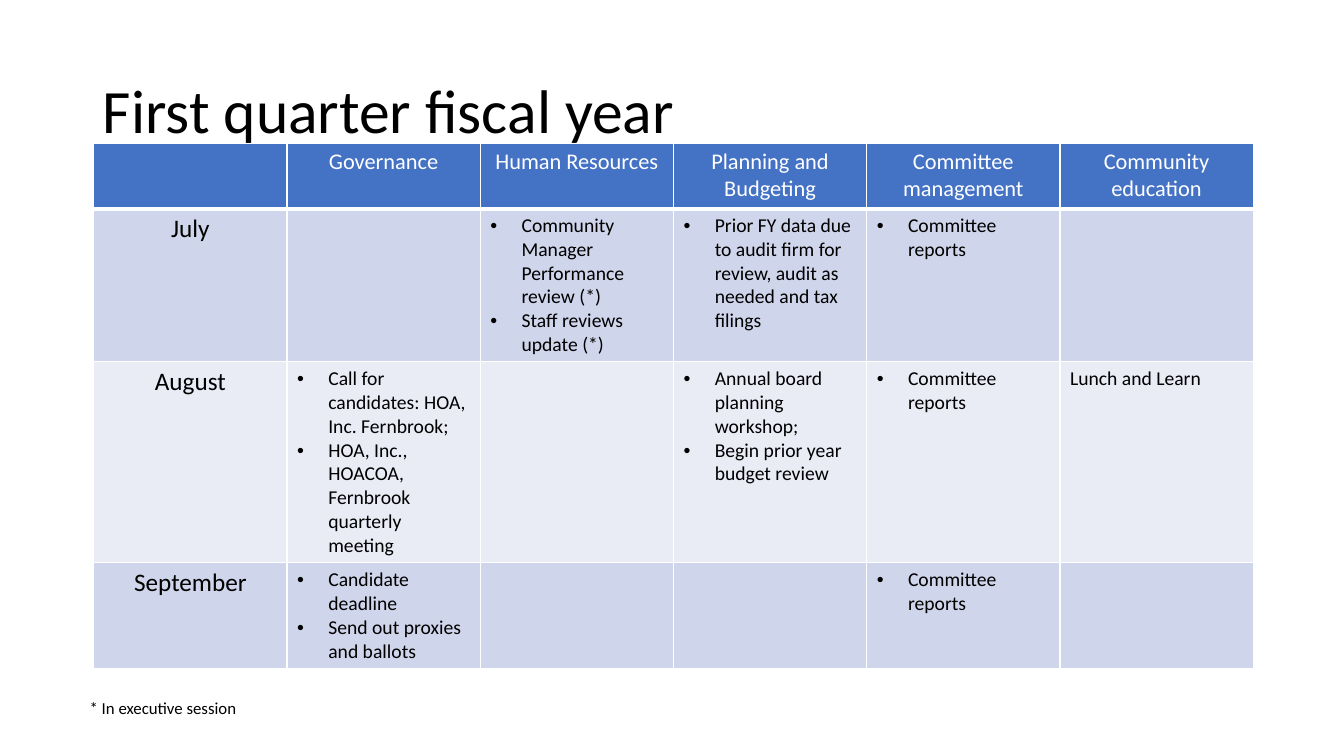
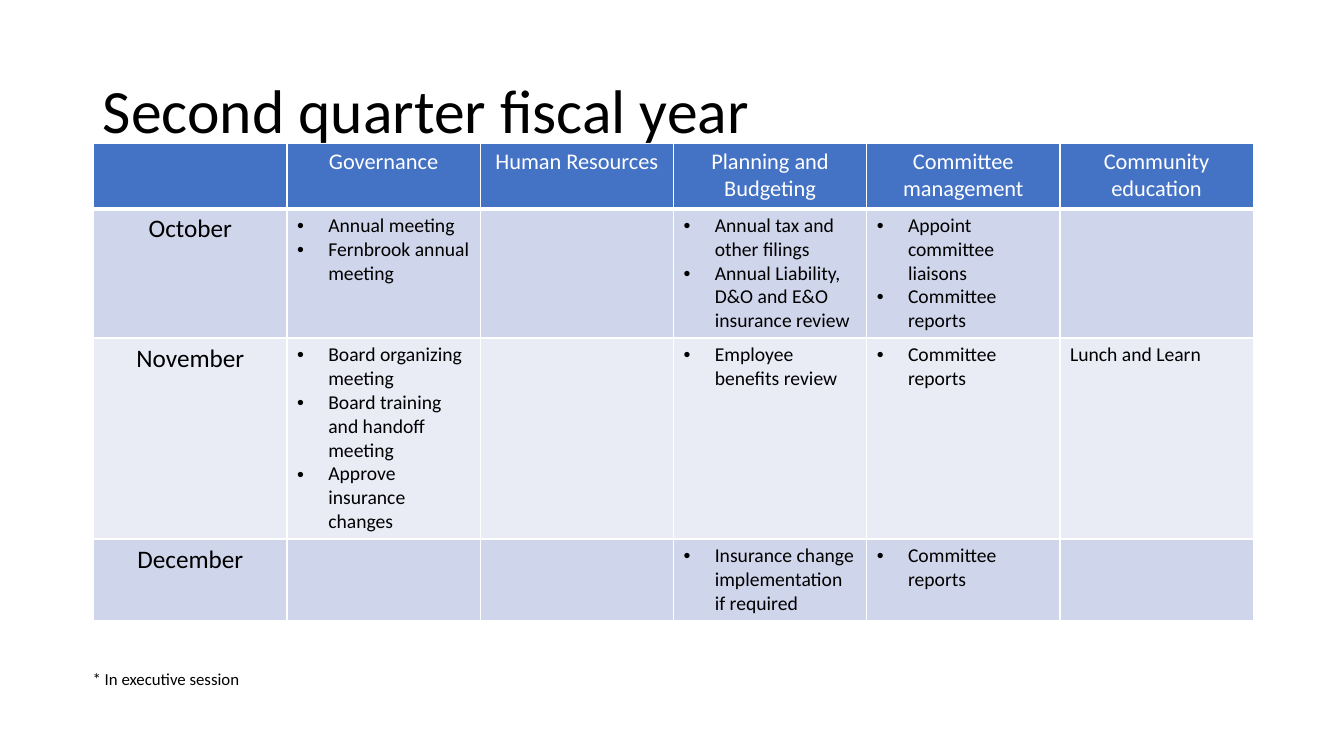
import pptx
import pptx.dml.color
import pptx.enum.text
import pptx.oxml.ns
import pptx.util
from lxml import etree

Inches = pptx.util.Inches
Pt = pptx.util.Pt
ALIGN = pptx.enum.text.PP_ALIGN
ANCHOR = pptx.enum.text.MSO_ANCHOR
AUTO_SIZE = pptx.enum.text.MSO_AUTO_SIZE

AREAS = ["Governance", "Human Resources", "Planning and Budgeting",
         "Committee management", "Community education"]
REPORTS = ["Committee reports"]
LUNCH = "Lunch and Learn"

QUARTERS = [
    {
        "title": "First quarter fiscal year",
        "months": [
            ("July", 1.52, [
                None,
                ["Community Manager Performance review (*)", "Staff reviews update (*)"],
                ["Prior FY data due to audit firm for review, audit as needed and tax filings"],
                REPORTS,
                None]),
            ("August", 1.99, [
                ["Call for candidates: HOA, Inc. Fernbrook;",
                 "HOA, Inc., HOACOA, Fernbrook quarterly meeting"],
                None,
                ["Annual board planning workshop;", "Begin prior year budget review"],
                REPORTS,
                LUNCH]),
            ("September", 1.04, [
                ["Candidate deadline", "Send out proxies and ballots"],
                None,
                None,
                REPORTS,
                None]),
        ],
        "footnote": (0.79, 6.87),
    },
    {
        "title": "Second quarter fiscal year",
        "months": [
            ("October", 1.28, [
                ["Annual meeting", "Fernbrook annual meeting"],
                None,
                ["Annual tax and other filings", "Annual Liability, D&O and E&O insurance review"],
                ["Appoint committee liaisons"] + REPORTS,
                None]),
            ("November", 1.99, [
                ["Board organizing meeting", "Board training and handoff meeting",
                 "Approve insurance changes"],
                None,
                ["Employee benefits review"],
                REPORTS,
                LUNCH]),
            ("December", 0.81, [
                None,
                None,
                ["Insurance change implementation if required"],
                REPORTS,
                None]),
        ],
        "footnote": (0.82, 6.59),
    },
]


def color(value):
    return pptx.dml.color.RGBColor.from_string(value)


class CalendarDeck:
    """Builds slides with a title, a calendar table and a footnote in one style."""

    FONT = "Calibri"
    TEXT, WHITE, HEADER = "000000", "FFFFFF", "4472C4"
    BANDS = ["CFD5EA", "E9EBF5"]
    HEADER_HEIGHT = 0.65

    def __init__(self):
        self.presentation = pptx.Presentation()
        self.presentation.slide_width = Inches(13.33)
        self.presentation.slide_height = Inches(7.5)
        self.slide = None

    def add_slide(self, title):
        self.slide = self.presentation.slides.add_slide(self.presentation.slide_layouts[5])
        shape = self.slide.shapes.title
        shape.left, shape.top = Inches(0.92), Inches(0.4)
        shape.width, shape.height = Inches(11.5), Inches(1.45)
        frame = shape.text_frame
        frame.text = title
        frame.auto_size = AUTO_SIZE.NONE
        frame.vertical_anchor = ANCHOR.MIDDLE
        frame.paragraphs[0].line_spacing = 0.9
        self.format_paragraph(frame.paragraphs[0], 44)

    def format_paragraph(self, paragraph, size, text_color=TEXT, align=ALIGN.LEFT):
        paragraph.alignment = align
        for run in paragraph.runs:
            run.font.name = self.FONT
            run.font.size = Pt(size)
            run.font.bold = False
            run.font.color.rgb = color(text_color)

    def add_bullet(self, paragraph):
        properties = paragraph._p.get_or_add_pPr()
        properties.set("marL", str(Inches(0.31)))
        properties.set("indent", str(-Inches(0.31)))
        qn = pptx.oxml.ns.qn
        etree.SubElement(properties, qn("a:buFont"), typeface="Arial")
        etree.SubElement(properties, qn("a:buChar"), char="•")

    def style_cell(self, cell, fill, bottom_width=1):
        qn = pptx.oxml.ns.qn
        properties = cell._tc.get_or_add_tcPr()
        for side, width in zip("LRTB", (1, 1, 1, bottom_width)):
            line = etree.SubElement(properties, qn(f"a:ln{side}"), w=str(Pt(width)))
            solid = etree.SubElement(line, qn("a:solidFill"))
            etree.SubElement(solid, qn("a:srgbClr"), val=self.WHITE)
        cell.fill.solid()
        cell.fill.fore_color.rgb = color(fill)

    def write_label(self, cell, text, size, text_color=TEXT):
        cell.text_frame.text = text
        for paragraph in cell.text_frame.paragraphs:
            self.format_paragraph(paragraph, size, text_color, ALIGN.CENTER)

    def write_tasks(self, cell, tasks):
        if not tasks:
            return
        bulleted = isinstance(tasks, list)
        cell.text_frame.text = "\n".join(tasks) if bulleted else tasks
        for paragraph in cell.text_frame.paragraphs:
            self.format_paragraph(paragraph, 14)
            if bulleted:
                self.add_bullet(paragraph)

    def add_calendar(self, months):
        heights = [self.HEADER_HEIGHT] + [height for _, height, _ in months]
        table = self.slide.shapes.add_table(
            len(heights), len(AREAS) + 1, Inches(0.93), Inches(1.42),
            Inches(11.5), Inches(sum(heights))).table
        for row, height in zip(table.rows, heights):
            row.height = Inches(height)
        for column, area in enumerate([""] + AREAS):
            cell = table.cell(0, column)
            self.style_cell(cell, self.HEADER, 3)
            self.write_label(cell, area, 16, self.WHITE)
        for row, (month, _, tasks_by_area) in enumerate(months, 1):
            for column in range(len(AREAS) + 1):
                self.style_cell(table.cell(row, column), self.BANDS[(row - 1) % 2])
            self.write_label(table.cell(row, 0), month, 18)
            for column, tasks in enumerate(tasks_by_area, 1):
                self.write_tasks(table.cell(row, column), tasks)

    def add_footnote(self, left, top):
        shape = self.slide.shapes.add_textbox(
            Inches(left), Inches(top), Inches(5.93), Inches(0.3))
        frame = shape.text_frame
        frame.word_wrap = True
        frame.auto_size = AUTO_SIZE.SHAPE_TO_FIT_TEXT
        frame.text = "* In executive session"
        self.format_paragraph(frame.paragraphs[0], 12)


def main():
    deck = CalendarDeck()
    for quarter in QUARTERS:
        deck.add_slide(quarter["title"])
        deck.add_calendar(quarter["months"])
        deck.add_footnote(*quarter["footnote"])
    deck.presentation.save("out.pptx")


if __name__ == "__main__":
    main()
